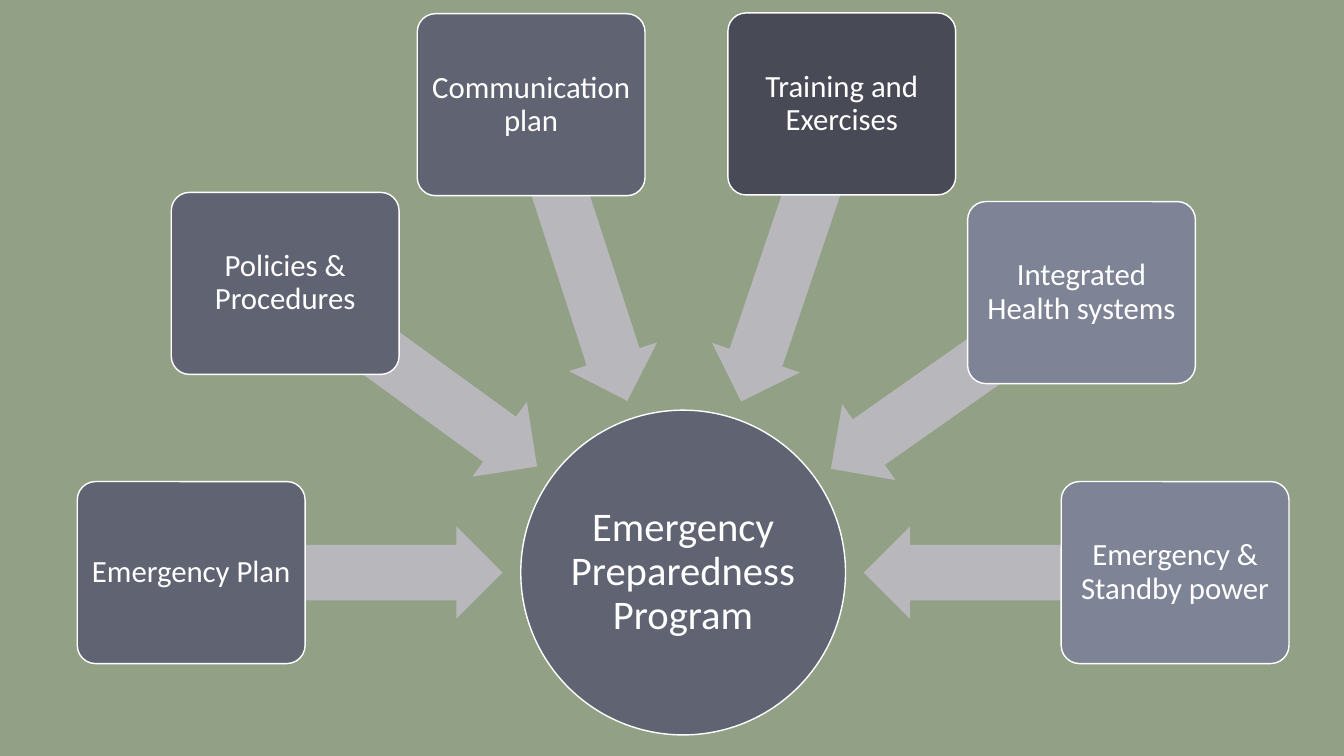
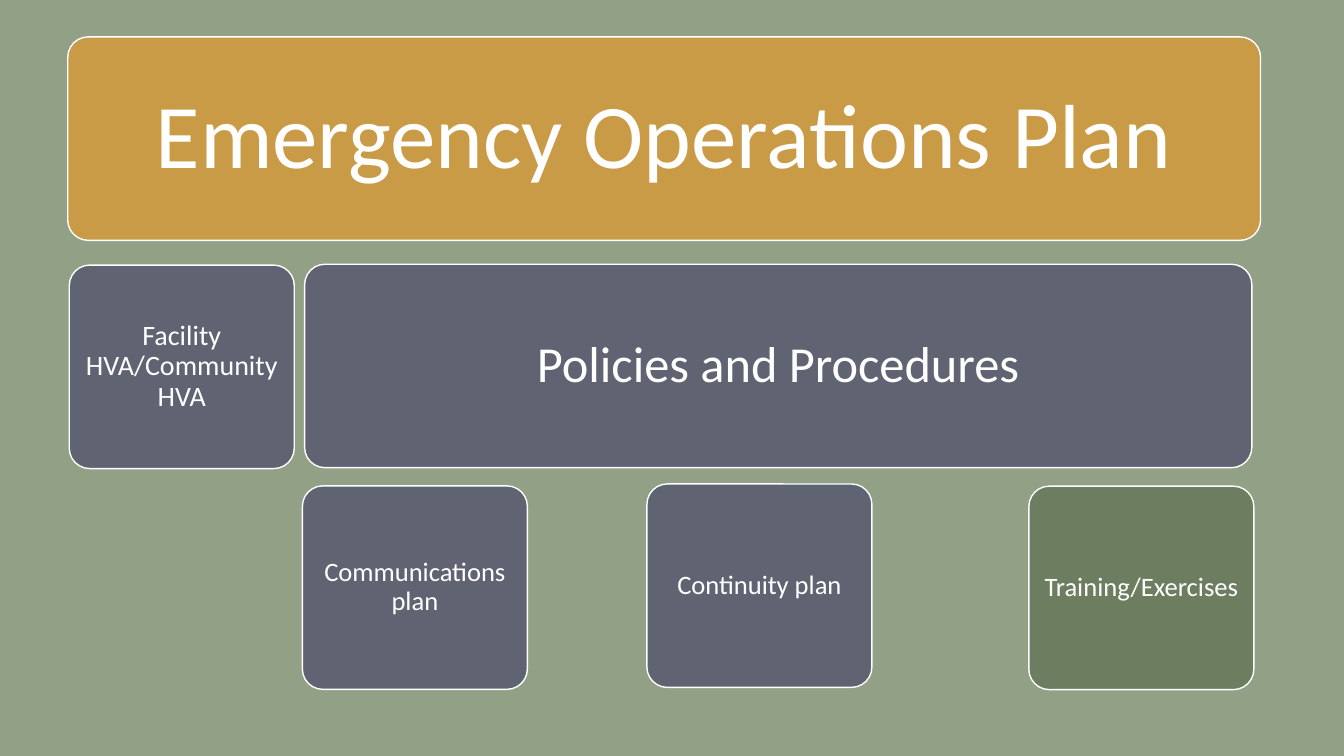
import math
from dataclasses import dataclass

import pptx
import pptx.dml.color
import pptx.enum.shapes
import pptx.enum.text
import pptx.util

Pt = pptx.util.Pt
Kind = pptx.enum.shapes.MSO_SHAPE


# Colours and type sizes
@dataclass(frozen=True)
class Theme:
    font: str = "Calibri"
    back: str = "92A185"
    white: str = "FFFFFF"
    slate: str = "606372"
    dark: str = "484A56"
    light: str = "7E8495"
    arrow: str = "B7B7BC"
    gold: str = "CA9B46"
    green: str = "6D7D60"
    title: int = 65
    band: int = 36
    hub: int = 29
    spoke: int = 22
    fact: int = 20
    plan: int = 19


THEME = Theme()


def paint(fill, color):
    fill.solid()
    fill.fore_color.rgb = pptx.dml.color.RGBColor.from_string(color)


def write(shape, text, size, inset):
    """Set centred white text in a shape."""
    frame = shape.text_frame
    frame.word_wrap = True
    frame.auto_size = pptx.enum.text.MSO_AUTO_SIZE.NONE
    frame.vertical_anchor = pptx.enum.text.MSO_ANCHOR.MIDDLE
    frame.margin_left = frame.margin_right = Pt(inset)
    frame.margin_top = frame.margin_bottom = Pt(inset)
    para = frame.paragraphs[0]
    para.text = text
    para.alignment = pptx.enum.text.PP_ALIGN.CENTER
    para.line_spacing = 0.9
    para.font.name = THEME.font
    para.font.size = Pt(size)
    para.font.color.rgb = pptx.dml.color.RGBColor.from_string(THEME.white)


def draw(slide, kind, box, color, edge=True):
    """Add a flat shape, with a white edge if asked."""
    shape = slide.shapes.add_shape(kind, *map(Pt, box))
    shape.shadow.inherit = False
    paint(shape.fill, color)
    if edge:
        paint(shape.line.fill, THEME.white)
        shape.line.width = Pt(1)
    else:
        shape.line.fill.background()
    return shape


def card(slide, box, color):
    shape = draw(slide, Kind.ROUNDED_RECTANGLE, box, color)
    shape.adjustments[0] = 0.1
    return shape


def around(x, y, wide, high):
    """Box of a given size centred on a point."""
    return x - wide / 2, y - high / 2, wide, high


def add_wheel(slide, box, spokes):
    """Hub at the foot of the box, with cards pointing to it."""
    left, top, wide, high = box
    hub = 232
    x, y = left + wide / 2, top + high - hub / 2
    tip = hub / 2 + 13

    # Hub
    disc = draw(slide, Kind.OVAL, around(x, y, hub, hub), THEME.slate)
    write(disc, "Emergency Preparedness Program", THEME.hub, 1.5)

    # Each arrow runs from the middle of its card to the hub
    for text, angle, reach, color in spokes:
        dx, dy = math.cos(math.radians(angle)), math.sin(math.radians(angle))
        mid = (tip + reach) / 2
        spot = around(x + mid * dx, y + mid * dy, reach - tip, 66.2)
        arrow = draw(slide, Kind.LEFT_ARROW, spot, THEME.arrow, edge=False)
        arrow.adjustments[0] = 0.6
        arrow.adjustments[1] = 0.5
        arrow.rotation = angle
        spot = around(x + reach * dx, y + reach * dy, 162.7, 130)
        write(card(slide, spot, color), text, THEME.spoke, 3.9)


def add_board(slide, box, cards):
    """Title band over cards placed from the corner of the box."""
    left, top, wide, _ = box
    high, small = 145.3, 160.7

    # Title band
    band = card(slide, (left, top, wide, high), THEME.gold)
    title = slide.shapes.title
    title.left, title.top = band.left, band.top
    title.width, title.height = band.width, band.height
    write(title, "Emergency Operations Plan", THEME.title, 23.5)
    band.element.addnext(title.element)

    # Cards
    for text, x, y, span, size, inset, color in cards:
        spot = left + x, top + y, span or small, high
        write(card(slide, spot, color), text, size, inset)


def main():
    deck = pptx.Presentation()
    deck.slide_width, deck.slide_height = Pt(960), Pt(540)
    paint(deck.slide_master.background.fill, THEME.back)
    layouts = deck.slide_layouts

    # Program wheel: text, angle, distance from hub, colour
    slide = deck.slides.add_slide(layouts.get_by_name("Blank"))
    add_wheel(slide, (55.5, 9.5, 865, 515.5), [
        ("Emergency Plan", 180, 351.4, THEME.slate),
        ("Policies & Procedures", 216, 351.4, THEME.slate),
        ("Communication plan", 252, 351.4, THEME.slate),
        ("Training and Exercises", 288.7, 353.4, THEME.dark),
        ("Integrated Health systems", 324.9, 347.8, THEME.light),
        ("Emergency & Standby power", 0, 351.4, THEME.light),
    ])

    # Plan board: text, x, y, width, type size, inset, colour
    slide = deck.slides.add_slide(layouts.get_by_name("Title Only"))
    add_board(slide, (48.4, 26.4, 852, 466), [
        ("Policies and Procedures", 169.2, 162.4, 676.6, THEME.band, 10.8,
         THEME.slate),
        ("Communications plan", 167.6, 320.7, None, THEME.plan, 5.6,
         THEME.slate),
        ("Training/Exercises", 686.5, 320.9, None, THEME.plan, 5.6,
         THEME.green),
        ("Facility HVA/Community HVA", 1.1, 163, None, THEME.fact, 5.6,
         THEME.slate),
        ("Continuity plan", 413.7, 319.3, None, THEME.plan, 5.6,
         THEME.slate),
    ])
    deck.save("out.pptx")


if __name__ == "__main__":
    main()
